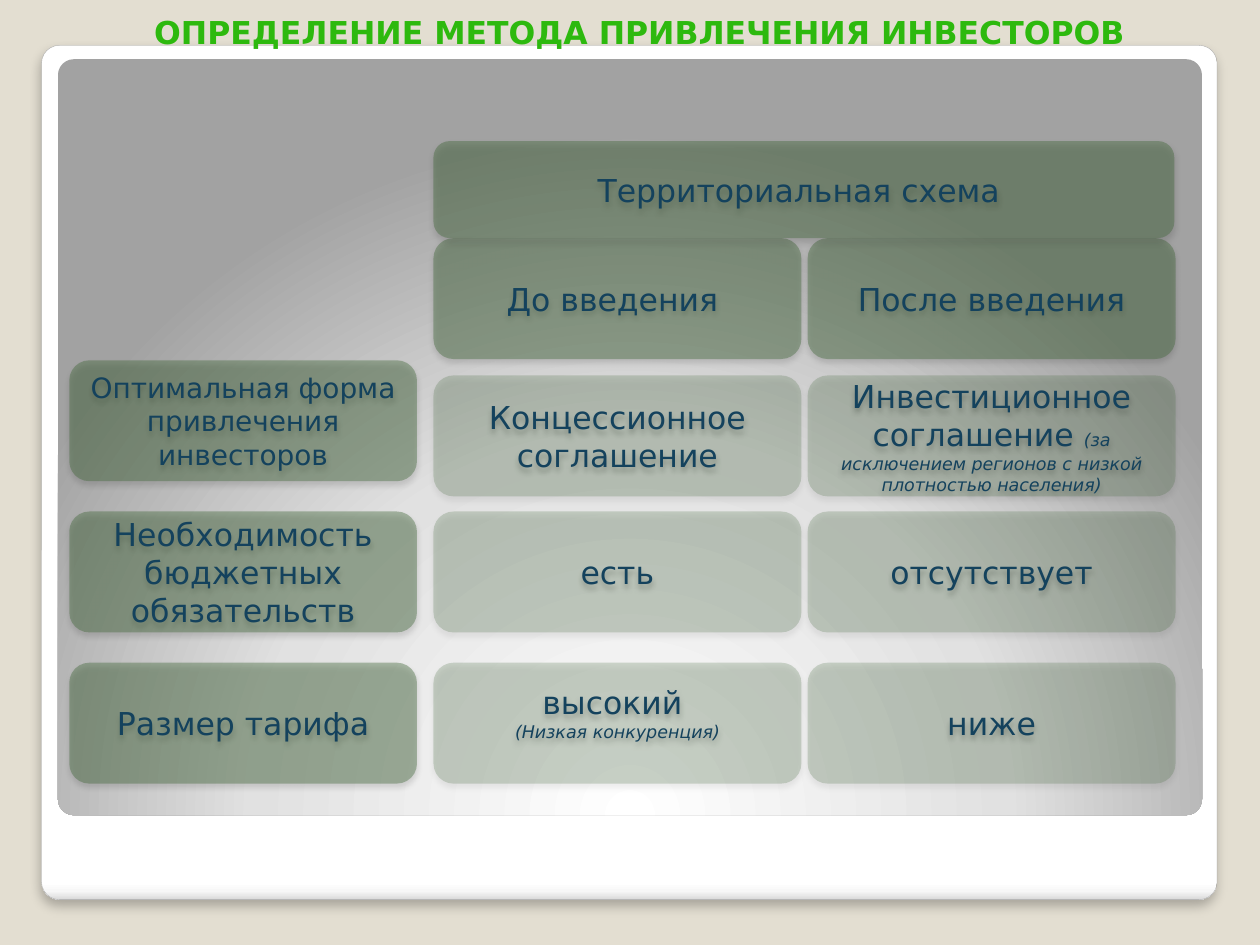
from lxml import etree
from pptx import Presentation, util as u
from pptx.dml.color import RGBColor
from pptx.enum import shapes, text
from pptx.oxml import parse_xml
from pptx.oxml.ns import qn

COLORS = {"bg": "E3DED1", "frame_line": "A4A4A4", "title": "2DB90E",
          "box": "3B6432", "text": "14425D", "shadow": "000000"}
NS = 'xmlns:a="http://schemas.openxmlformats.org/drawingml/2006/main"'
FONT = "DejaVu Sans"
HEADER, VALUE = 38, 21
BODY = {"size": u.Pt(18)}
NOTE = {"size": u.Pt(10), "italic": True}
COL_X, COL_W, BOX_H = (3.44, 6.41), 2.92, 0.96


def rgb(name):
    return RGBColor.from_string(COLORS[name])


def add_color(parent, name, alpha):
    c = etree.SubElement(parent, qn("a:srgbClr"), val=COLORS[name])
    etree.SubElement(c, qn("a:alpha"), val=str(alpha * 1000))


def add_shadow(sp, alpha, blur, dist):
    effects = sp._element.spPr.find(qn("a:effectLst"))
    shadow = etree.SubElement(effects, qn("a:outerShdw"), blurRad=str(u.Pt(blur)),
                              dist=str(u.Pt(dist)), dir="5400000", rotWithShape="0")
    add_color(shadow, "shadow", alpha)


def set_gradient(sp, stops, direction):
    gs = "".join(f'<a:gs pos="{pos * 1000}"><a:srgbClr val="{c}"/></a:gs>' for pos, c in stops)
    sp.fill.solid()
    old = sp._element.spPr.find(qn("a:solidFill"))
    old.getparent().replace(old, parse_xml(
        f'<a:gradFill {NS} rotWithShape="1"><a:gsLst>{gs}</a:gsLst>{direction}</a:gradFill>'))


def add_round_rect(s, x, y, w, h, adj=None):
    sp = s.shapes.add_shape(shapes.MSO_SHAPE.ROUNDED_RECTANGLE, *map(u.Inches, (x, y, w, h)))
    sp.shadow.inherit = False
    sp.line.fill.background()
    if adj is not None:
        sp.adjustments[0] = adj
    return sp


def add_run(p, words, color, fmt):
    r = p.add_run()
    r.text = words
    r.font.name = FONT
    r.font.color.rgb = rgb(color)
    for key, value in fmt.items():
        setattr(r.font, key, value)


def add_box(s, x, y, w, h, alpha, *paragraphs, bottom=0.05):
    sp = add_round_rect(s, x, y, w, h)
    sp.fill.solid()
    sp.fill.fore_color.rgb = rgb("box")
    fill = sp._element.spPr.find(qn("a:solidFill"))
    fill.remove(fill[0])
    add_color(fill, "box", alpha)
    add_shadow(sp, 32, 3.5, 2.2)
    tf = sp.text_frame
    tf.word_wrap = True
    tf.vertical_anchor = text.MSO_ANCHOR.MIDDLE
    tf.margin_bottom = u.Inches(bottom)
    for i, runs in enumerate(paragraphs):
        p = tf.paragraphs[0] if i == 0 else tf.add_paragraph()
        p.alignment = text.PP_ALIGN.CENTER
        for words, fmt in runs:
            add_run(p, words, "text", fmt)


def add_backdrop(s):
    frame = add_round_rect(s, 0.33, 0.36, 9.33, 6.78, 0.021)
    set_gradient(frame, [(0, "FFFFFF"), (98, "FFFFFF"), (99, "F7F7F7"), (100, "DADADA")],
                 '<a:lin ang="5400000" scaled="0"/>')
    frame.line.color.rgb = rgb("frame_line")
    frame.line.width = u.Pt(0.16)
    add_shadow(frame, 25, 6, 4)
    panel = add_round_rect(s, 0.46, 0.47, 9.08, 6, 0.021)
    set_gradient(panel, [(0, "FFFFFF"), (55, "E1E1E1"), (100, "A2A2A2")],
                 '<a:path path="circle"><a:fillToRect l="50000" t="175000" '
                 'r="50000" b="-75000"/></a:path>')


def add_title(s, words):
    tf = s.shapes.add_textbox(*map(u.Inches, (0.55, 0, 8.95, 0.54))).text_frame
    tf.word_wrap = True
    for side, inset in {"left": 0.2, "top": 0.1, "right": 0.1, "bottom": 0.05}.items():
        setattr(tf, f"margin_{side}", u.Inches(inset))
    p = tf.paragraphs[0]
    p.alignment = text.PP_ALIGN.CENTER
    p.space_before = u.Pt(2.5)
    add_run(p, words, "title", {"size": u.Pt(18), "bold": True})


def main():
    prs = Presentation()
    prs.slide_width, prs.slide_height = u.Inches(10), u.Inches(7.5)
    s = prs.slides.add_slide(prs.slide_layouts[6])
    s.background.fill.solid()
    s.background.fill.fore_color.rgb = rgb("bg")
    add_backdrop(s)
    add_title(s, "ОПРЕДЕЛЕНИЕ МЕТОДА ПРИВЛЕЧЕНИЯ ИНВЕСТОРОВ")

    criteria = [("Оптимальная форма привлечения инвесторов", 16),
                ("Необходимость бюджетных обязательств", 18),
                ("Размер тарифа", 18)]
    for i, (words, size) in enumerate(criteria):
        add_box(s, 0.55, 2.86 + 1.2 * i, 2.76, BOX_H, HEADER, [(words, {"size": u.Pt(size)})])
    for x, words in zip(COL_X, ("До введения ", "После введения")):
        add_box(s, x, 1.89, COL_W, BOX_H, HEADER, [(words, BODY)])

    rows = [(2.98, [("Концессионное соглашение", BODY)],
             [("Инвестиционное соглашение ", BODY),
              ("(за исключением регионов с низкой плотностью населения)", NOTE)]),
            (4.06, [("есть", BODY)], [("отсутствует", BODY)])]
    for y, *cells in rows:
        for x, runs in zip(COL_X, cells):
            add_box(s, x, y, COL_W, BOX_H, VALUE, runs)
    add_box(s, COL_X[0], 5.26, COL_W, BOX_H, VALUE, [("высокий ", BODY)],
            [("(Низкая конкуренция)", NOTE)], bottom=0.22)
    add_box(s, COL_X[1], 5.26, COL_W, BOX_H, VALUE, [("ниже", BODY)])
    add_box(s, COL_X[0], 1.12, 5.88, 0.77, HEADER, [("Территориальная схема ", BODY)])
    prs.save("out.pptx")


if __name__ == "__main__":
    main()
